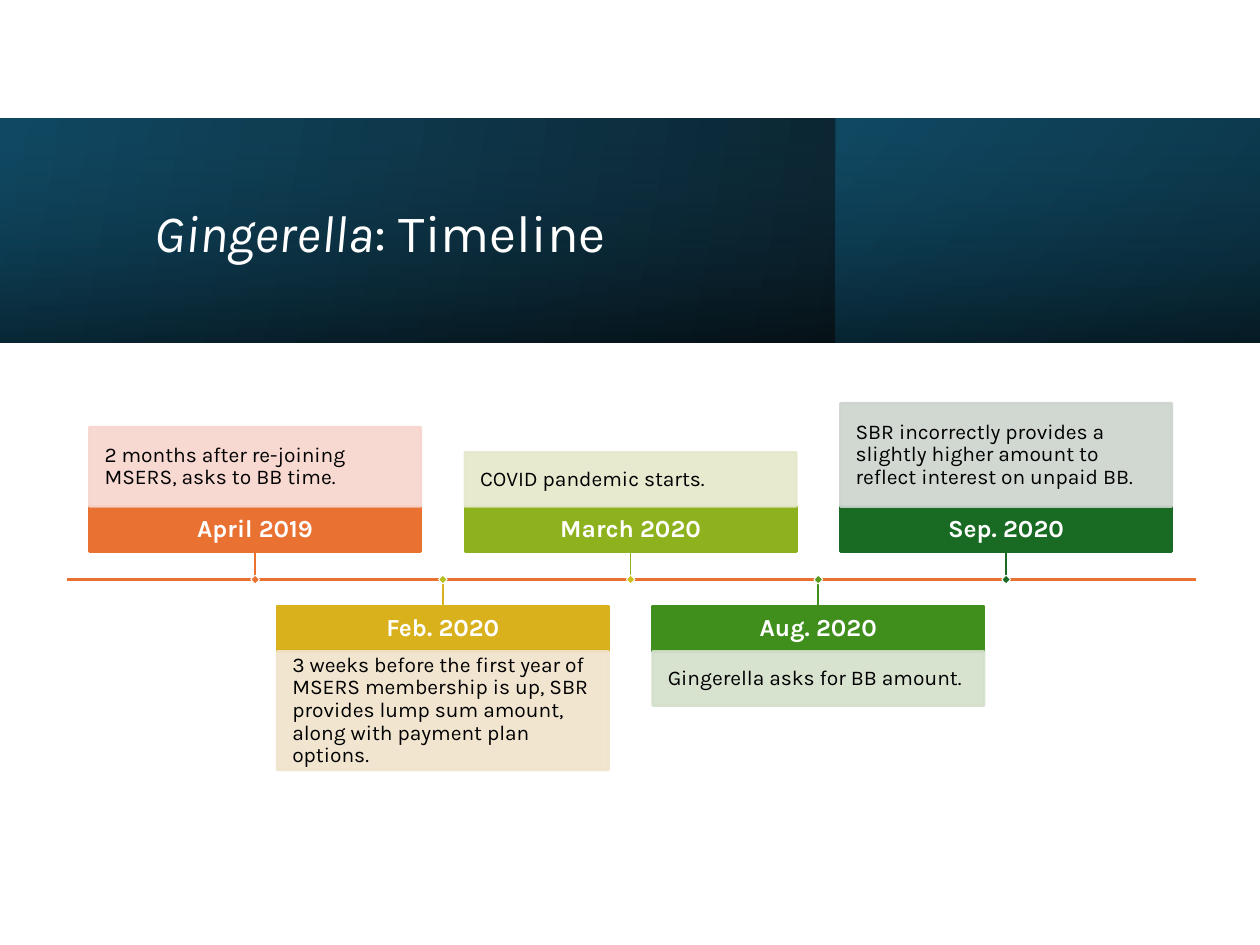
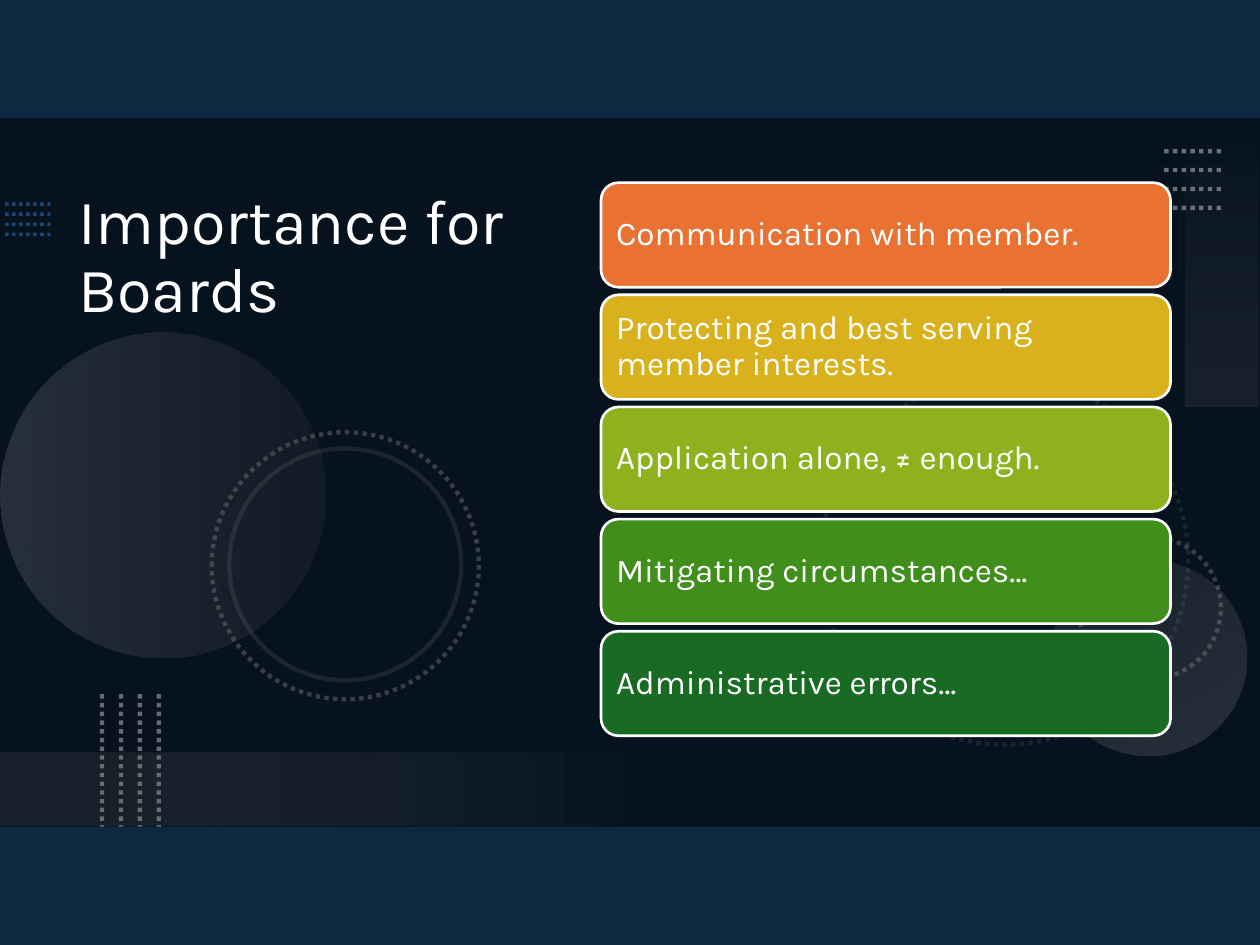
from lxml import etree
from pptx import Presentation
from pptx.dml.color import RGBColor
from pptx.enum import dml, shapes, text
from pptx.oxml.ns import qn
from pptx.util import Inches, Pt

FONT = "Karla"
C = {
    "white": "FFFFFF", "black": "000000", "navy": "0E2841",
    "orange": "E97132", "gold": "D8B11D", "lime": "8EB21E",
    "green": "408E1C", "forest": "196B24",
    "peach": "F7D5CE", "sand": "F0E3CB", "pale lime": "E5E8CA",
    "pale green": "D3DFCA", "pale forest": "CCD4CD",
    "olive": "B7C11E", "citron": "CBC11E", "leaf": "56991D",
    "teal": "104862", "deep teal": "0B3041", "ink": "0B1A22",
    "blue": "2D7FCF", "silver": "AEAEAE", "grey": "747474",
}
STEP_COLORS = ["orange", "gold", "lime", "green", "forest"]
BAND_TOP = 0.94


def paint(shape, fill=None, line=None, width=1.5, alpha=100, dotted=False, angle=0):
    """Fill is a colour name or a list of (position, colour, opacity) stops."""
    sp_pr = shape._element.spPr
    opacities = []
    if isinstance(fill, list):
        shape.fill.gradient()
        shape.fill.gradient_angle = -angle % 360
        for stop, (position, color, opacity) in zip(shape.fill.gradient_stops, fill):
            stop.position = position
            stop.color.rgb = RGBColor.from_string(C[color])
            opacities.append(opacity)
    elif fill:
        shape.fill.solid()
        shape.fill.fore_color.rgb = RGBColor.from_string(C[fill])
        opacities.append(alpha)
    elif hasattr(shape, "fill"):
        shape.fill.background()
    if line:
        shape.line.color.rgb = RGBColor.from_string(C[line])
        shape.line.width = Pt(width)
        opacities.append(alpha)
        if dotted:
            shape.line.dash_style = dml.MSO_LINE.ROUND_DOT
    else:
        shape.line.fill.background()
    for color, opacity in zip(sp_pr.iter(qn("a:srgbClr")), opacities):
        if opacity < 100:
            etree.SubElement(color, qn("a:alpha")).set("val", str(opacity * 1000))
    if hasattr(shape, "shadow"):
        shape.shadow.inherit = False
    else:
        etree.SubElement(sp_pr, qn("a:effectLst"))


def write(shape, words, size, color="white", bold=False, inset=0.08,
          align=text.PP_ALIGN.LEFT, anchor=text.MSO_ANCHOR.MIDDLE):
    frame = shape.text_frame
    frame.word_wrap = True
    frame.auto_size = text.MSO_AUTO_SIZE.NONE
    frame.vertical_anchor = anchor
    frame.margin_left = frame.margin_right = Inches(inset)
    frame.margin_top = frame.margin_bottom = Inches(min(inset, 0.05))
    paragraph = frame.paragraphs[0]
    paragraph.alignment = align
    paragraph.line_spacing = 0.9
    for part in words:
        run = paragraph.add_run()
        run.text = part
        run.font.name = FONT
        run.font.size = Pt(size)
        run.font.bold = bold
        run.font.color.rgb = RGBColor.from_string(C[color])


RECT, ROUND, OVAL = (shapes.MSO_SHAPE.RECTANGLE, shapes.MSO_SHAPE.ROUNDED_RECTANGLE,
                     shapes.MSO_SHAPE.OVAL)
STRAIGHT = shapes.MSO_CONNECTOR.STRAIGHT

prs = Presentation()
prs.slide_width, prs.slide_height = Inches(10), Inches(7.5)
title_only = prs.slide_layouts[5]

# ---- Slide 1: timeline ----
timeline = prs.slides.add_slide(title_only)
timeline.background.fill.solid()
timeline.background.fill.fore_color.rgb = RGBColor.from_string(C["white"])

# Header band: base, right panel, shade towards the bottom
for left, width, stops, angle in [
    (0, 10, [(0, "teal", 100), (0.75, "ink", 100)], 10),
    (6.63, 3.37, [(0, "teal", 100), (1, "deep teal", 100)], 40),
    (0, 10, [(0.1, "teal", 16), (1, "black", 45)], 90),
]:
    band = timeline.shapes.add_shape(RECT, Inches(left), Inches(BAND_TOP),
                                     Inches(width), Inches(1.78))
    paint(band, stops, angle=angle)

# Title, moved in front of the band
heading = timeline.shapes.title
heading.left, heading.top, heading.width, heading.height = map(Inches, (1.13, 1.22, 7.97, 1.29))
write(heading, ["Gingerella", ": Timeline"], 30, inset=0.1)
heading.text_frame.paragraphs[0].runs[0].font.italic = True
timeline.shapes._spTree.append(heading._element)

# Axis and events, alternately above and below it
AXIS_Y, CARD_W, DATE_H, MARK = 4.6, 2.63, 0.36, 0.05
axis = timeline.shapes.add_connector(STRAIGHT, Inches(0.53), Inches(AXIS_Y),
                                     Inches(9.49), Inches(AXIS_Y))
paint(axis, line="orange")

events = [
    ("April 2019", "2 months after re-joining MSERS, asks to BB time.", 0.63, "peach", "orange"),
    ("Feb. 2020", "3 weeks before the first year of MSERS membership is up, SBR provides "
                  "lump sum amount, along with payment plan options.", 0.94, "sand", "olive"),
    ("March 2020", "COVID pandemic starts.", 0.43, "pale lime", "citron"),
    ("Aug. 2020", "Gingerella asks for BB amount.", 0.43, "pale green", "leaf"),
    ("Sep. 2020", "SBR incorrectly provides a slightly higher amount to reflect interest "
                  "on unpaid BB.", 0.82, "pale forest", "forest"),
]
for i, (when, what, detail_h, tint, mark_color) in enumerate(events):
    above = i % 2 == 0
    left = 0.71 + 1.49 * i
    middle = left + CARD_W / 2
    date_top = 4.02 if above else 4.81
    detail_top = date_top - detail_h if above else date_top + DATE_H

    date = timeline.shapes.add_shape(RECT, Inches(left), Inches(date_top),
                                     Inches(CARD_W), Inches(DATE_H))
    paint(date, STEP_COLORS[i], STEP_COLORS[i])
    write(date, [when], 14, bold=True, align=text.PP_ALIGN.CENTER)

    detail = timeline.shapes.add_shape(RECT, Inches(left), Inches(detail_top),
                                       Inches(CARD_W), Inches(detail_h))
    paint(detail, tint, tint, alpha=90)
    write(detail, [what], 12, "black", inset=0.12)

    stem = timeline.shapes.add_connector(STRAIGHT, Inches(middle), Inches(date_top),
                                         Inches(middle), Inches(AXIS_Y))
    stem.begin_connect(date, 2 if above else 0)
    paint(stem, line=STEP_COLORS[i], width=1)

    marker = timeline.shapes.add_shape(RECT, Inches(middle - MARK / 2),
                                       Inches(AXIS_Y - MARK / 2), Inches(MARK), Inches(MARK))
    marker.rotation = 45
    paint(marker, mark_color, "white", width=0.5)

# ---- Slide 2: importance for boards ----
boards = prs.slides.add_slide(title_only)
boards.background.fill.solid()
boards.background.fill.fore_color.rgb = RGBColor.from_string(C["navy"])

panel = boards.shapes.add_shape(RECT, 0, Inches(BAND_TOP), Inches(10), Inches(5.62))
paint(panel, "black", alpha=53)

# Rings: left, top, diameter, opacity, dotted
for left, top, size, alpha, dotted in [
    (6.51, 2.99, 2.92, 18, True), (8.56, 4.26, 1.13, 45, True),
    (1.68, 3.43, 2.12, 45, True), (1.82, 3.56, 1.84, 20, False),
]:
    ring = boards.shapes.add_shape(OVAL, Inches(left), Inches(top), Inches(size), Inches(size))
    paint(ring, line="grey", width=2.5, alpha=alpha, dotted=dotted)

# Soft discs and strips
for kind, left, top, width, height, stops, angle in [
    (OVAL, 0, 2.64, 2.58, 2.58, [(0, "silver", 20), (1, "grey", 10)], 0),
    (OVAL, 8.33, 4.44, 1.56, 1.56, [(0, "silver", 10), (1, "silver", 20)], 60),
    (RECT, 9.41, 0.94, 0.58, 2.29, [(0, "white", 0), (1, "silver", 10)], 90),
    (RECT, 0, 5.97, 5, 0.58, [(0.1, "grey", 15), (1, "white", 0)], 0),
]:
    glow = boards.shapes.add_shape(kind, Inches(left), Inches(top),
                                   Inches(width), Inches(height))
    paint(glow, stops, angle=angle)

# Dot grids: first line's ends, step to the next line, colour, width, opacity
for x1, y1, x2, y2, dx, dy, color, width, alpha in [
    (0.04, 1.62, 0.4, 1.62, 0, 0.08, "blue", 2, 50),
    (9.24, 1.2, 9.69, 1.2, 0, 0.15, "silver", 2.5, 60),
    (0.81, 5.51, 0.81, 6.56, 0.15, 0, "grey", 2.5, 90),
]:
    for n in range(4):
        dots = boards.shapes.add_connector(STRAIGHT, Inches(x1 + n * dx), Inches(y1 + n * dy),
                                           Inches(x2 + n * dx), Inches(y2 + n * dy))
        paint(dots, line=color, width=width, alpha=alpha, dotted=True)

# Title
heading = boards.shapes.title
heading.left, heading.top, heading.width, heading.height = map(Inches, (0.52, 1.46, 4.06, 4.52))
write(heading, ["Importance for Boards"], 36, inset=0.1, anchor=text.MSO_ANCHOR.TOP)
boards.shapes._spTree.append(heading._element)

# Reasons
reasons = [
    "Communication with member.",
    "Protecting and best serving member interests.",
    "Application alone, ≠ enough.",
    "Mitigating circumstances…",
    "Administrative errors…",
]
for i, (reason, color) in enumerate(zip(reasons, STEP_COLORS)):
    bar = boards.shapes.add_shape(ROUND, Inches(4.77), Inches(1.45 + 0.89 * i),
                                  Inches(4.52), Inches(0.83))
    paint(bar, color, "white")
    write(bar, [reason], 19)

prs.save("out.pptx")
